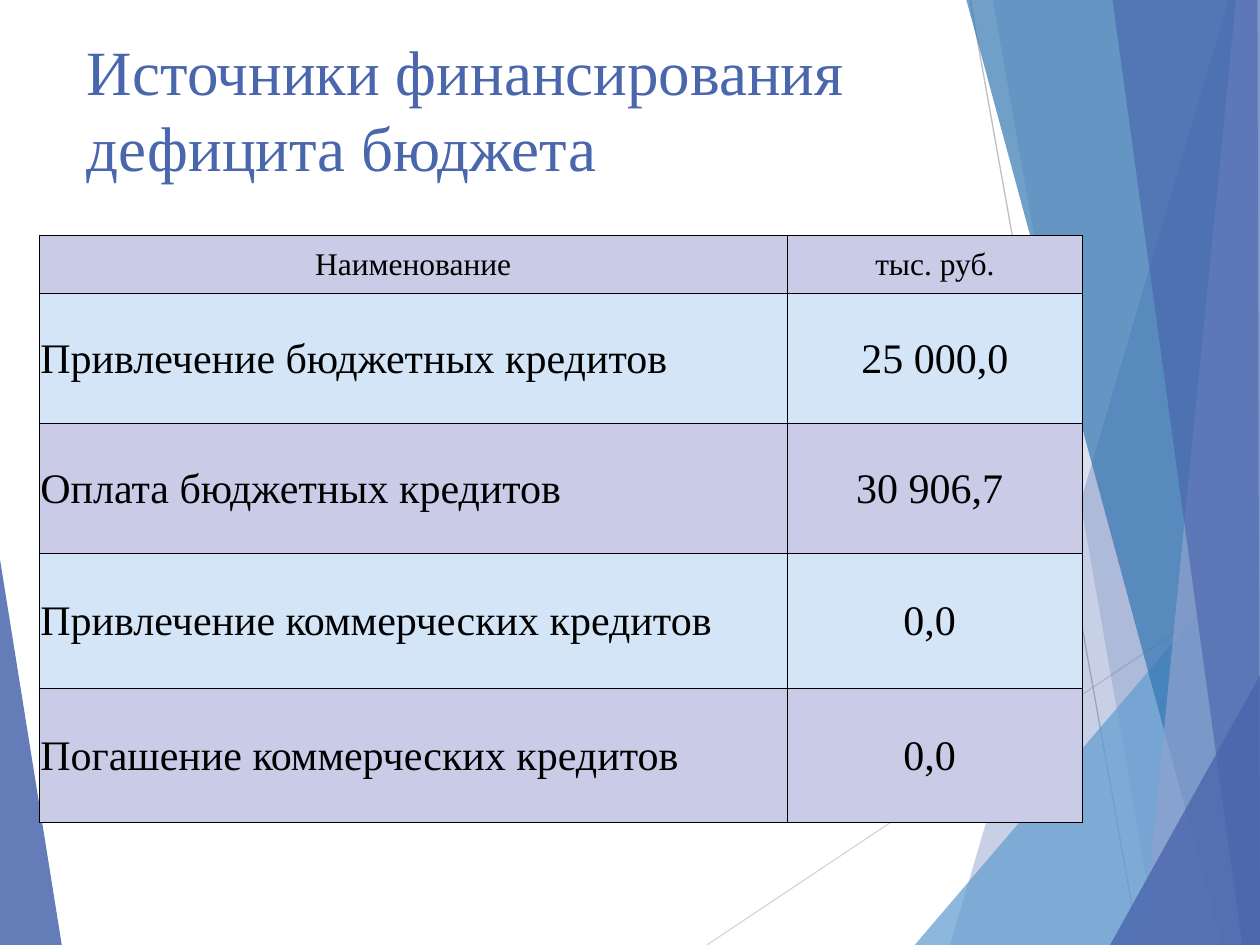
from dataclasses import dataclass

from lxml import etree
from pptx import Presentation
from pptx import util as u
from pptx.dml.color import RGBColor
from pptx.enum import shapes, text
from pptx.oxml.ns import qn

W, H = 10, 7.5


@dataclass(frozen=True)
class Theme:
    font: str = "Times New Roman"
    title_size: int = 36
    head_size: int = 18
    body_size: int = 24
    ink: str = "000000"
    indigo: str = "4A66AC"
    sky: str = "629DD1"
    blue: str = "3477B2"
    haze: str = "90A2CF"
    bands: tuple = ("C9CBE7", "D4E5F7")


T = Theme()

# Corner points, colour and opacity in percent, from back to front
FACETS = [
    ([(0, 4.44), (0.49, H), (0, H)], T.indigo, 85),
    ([(9.75, 0), (7.54, H), (W, H), (W, 0)], T.indigo, 30),
    ([(7.88, 0), (9.19, H), (W, H), (W, 0)], T.indigo, 20),
    ([(7.26, H), (W, 4.29), (W, H)], T.sky, 72),
    ([(7.67, 0), (9.7, H), (W, H), (W, 0)], T.blue, 70),
    ([(9.81, 0), (9.07, H), (W, H), (W, 0)], T.haze, 70),
    ([(8.83, 0), (9.86, H), (W, H), (9.98, 0)], T.indigo, 65),
    ([(8.81, H), (W, 5.36), (W, H)], T.indigo, 80),
]
RAYS = [((5.61, H), (W, 4.57), "D9D9D9"), ((7.7, 0), (9.04, H), "BFBFBF")]

COLUMNS = [5.94, 2.34]
ROW_HEIGHTS = [0.46, 1.03, 1.03, 1.07, 1.07]
ROWS = [
    ("Наименование", "тыс. руб."),
    ("Привлечение бюджетных кредитов", "25 000,0"),
    ("Оплата бюджетных кредитов", "30 906,7 "),
    ("Привлечение коммерческих кредитов", "0,0 "),
    ("Погашение коммерческих кредитов", "0,0 "),
]


def rgb(color):
    return RGBColor.from_string(color)


def write(tf, words, size, color=T.ink, align=text.PP_ALIGN.LEFT):
    p = tf.paragraphs[0]
    p.alignment = align
    r = p.add_run()
    r.text = words
    r.font.name = T.font
    r.font.size = u.Pt(size)
    r.font.color.rgb = rgb(color)


def add_facet(s, points, color, opacity):
    """Draw a translucent polygon without outline."""
    corners = [(u.Inches(x), u.Inches(y)) for x, y in points]
    builder = s.shapes.build_freeform(*corners[0])
    builder.add_line_segments(corners[1:], close=True)
    sp = builder.convert_to_shape()
    sp.shadow.inherit = False
    sp.line.fill.background()
    sp.fill.solid()
    sp.fill.fore_color.rgb = rgb(color)
    clr = sp._element.spPr.find(".//" + qn("a:srgbClr"))
    etree.SubElement(clr, qn("a:alpha")).set("val", str(opacity * 1000))


def add_ray(s, start, end, color):
    ends = [u.Inches(v) for v in (*start, *end)]
    line = s.shapes.add_connector(shapes.MSO_CONNECTOR.STRAIGHT, *ends)
    line.line.color.rgb = rgb(color)
    line.line.width = u.Pt(0.75)
    etree.SubElement(line._element.spPr, qn("a:effectLst"))


def set_title(s, words):
    title = s.shapes.title
    title.left, title.top = u.Inches(0.59), u.Inches(0.21)
    title.width, title.height = u.Inches(6.94), u.Inches(1.44)
    tf = title.text_frame
    tf.word_wrap = True
    tf.auto_size = text.MSO_AUTO_SIZE.NONE
    tf.vertical_anchor = text.MSO_ANCHOR.TOP
    write(tf, words, T.title_size, T.indigo)


def add_borders(cell, width=0.25):
    tc_pr = cell._tc.get_or_add_tcPr()
    for side in ("lnL", "lnR", "lnT", "lnB"):
        ln = etree.SubElement(tc_pr, qn("a:" + side), w=str(u.Pt(width)))
        fill = etree.SubElement(ln, qn("a:solidFill"))
        etree.SubElement(fill, qn("a:srgbClr"), val=T.ink)


def format_cell(cell, fill):
    cell.margin_left = cell.margin_right = cell.margin_top = u.Inches(0.01)
    cell.margin_bottom = 0
    cell.vertical_anchor = text.MSO_ANCHOR.MIDDLE
    add_borders(cell)
    cell.fill.solid()
    cell.fill.fore_color.rgb = rgb(fill)


def add_budget_table(s):
    box = (0.31, 1.87, sum(COLUMNS), sum(ROW_HEIGHTS))
    table = s.shapes.add_table(len(ROWS), len(COLUMNS),
                               *map(u.Inches, box)).table
    table.first_row = table.horz_banding = False
    for column, width in zip(table.columns, COLUMNS):
        column.width = u.Inches(width)
    for i, (row, height) in enumerate(zip(table.rows, ROW_HEIGHTS)):
        row.height = u.Inches(height)
        for j, words in enumerate(ROWS[i]):
            cell = table.cell(i, j)
            format_cell(cell, T.bands[i % 2])
            centred = i == 0 or j == 1
            write(cell.text_frame, words,
                  T.body_size if i else T.head_size,
                  align=text.PP_ALIGN.CENTER if centred else text.PP_ALIGN.LEFT)


def main():
    prs = Presentation()
    prs.slide_width, prs.slide_height = u.Inches(W), u.Inches(H)
    s = prs.slides.add_slide(prs.slide_layouts[5])
    for ray in RAYS:
        add_ray(s, *ray)
    for facet in FACETS:
        add_facet(s, *facet)
    set_title(s, "Источники финансирования дефицита бюджета")
    add_budget_table(s)
    prs.save("out.pptx")


if __name__ == "__main__":
    main()
